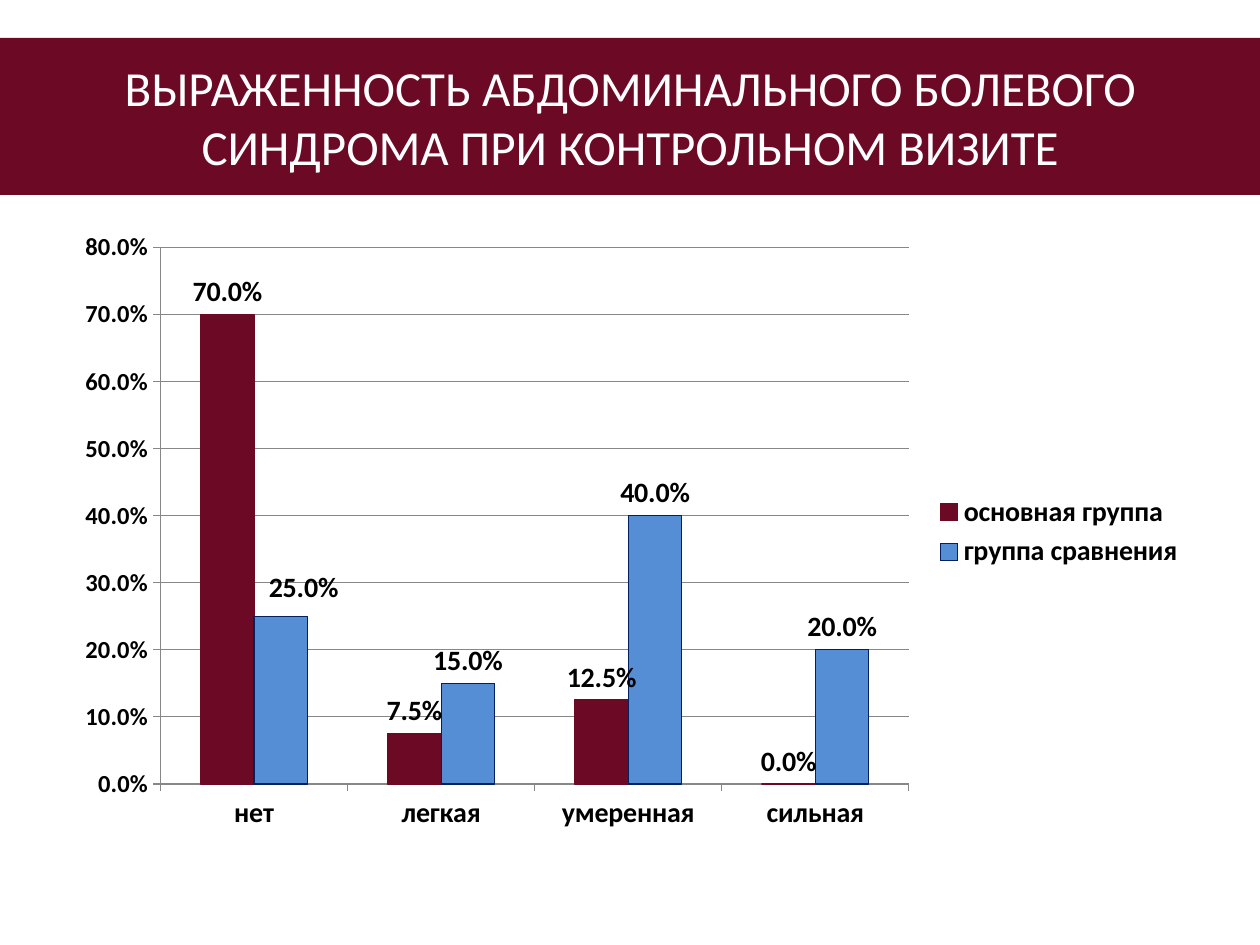
from dataclasses import dataclass

from lxml.etree import SubElement
from pptx import Presentation
from pptx.chart.data import CategoryChartData
from pptx.dml.color import RGBColor
from pptx.enum.chart import XL_CHART_TYPE, XL_LABEL_POSITION, XL_LEGEND_POSITION, XL_TICK_MARK
from pptx.enum.text import MSO_ANCHOR, PP_ALIGN
from pptx.oxml import parse_xml
from pptx.oxml.ns import nsdecls, qn
from pptx.util import Emu, Pt

WINE = RGBColor(0x6C, 0x0A, 0x26)
BLUE = RGBColor(0x55, 0x8E, 0xD5)
NAVY = RGBColor(0x00, 0x20, 0x60)
GRAY = RGBColor(0x87, 0x87, 0x87)
BLACK = RGBColor(0, 0, 0)
WHITE = RGBColor(255, 255, 255)
FONT = "Calibri"
PERCENT = "0.0%"


@dataclass
class Group:
    name: str
    values: tuple[float, ...]
    fill: RGBColor
    line: RGBColor


LEVELS = ("нет", "легкая", "умеренная", "сильная")
GROUPS = (
    Group("основная группа", (0.7, 0.075, 0.125, 0), WINE, WINE),
    Group("группа сравнения", (0.25, 0.15, 0.4, 0.2), BLUE, NAVY),
)


def px(count: int) -> Emu:
    return Emu(round(count * 914400 / 126))


def style(font, size: int, bold: bool = True, color: RGBColor = BLACK) -> None:
    font.name = FONT
    font.size = Pt(size)
    font.bold = bold
    font.color.rgb = color


def layout(**places: float):
    """Manual chart layout; places are fractions of the chart size."""
    root = parse_xml(f"<c:layout {nsdecls('c')}><c:manualLayout/></c:layout>")
    for key, value in places.items():
        SubElement(root[0], qn(f"c:{key}")).set("val", str(value))
    return root


def add_title(slide, text: str) -> None:
    title = slide.shapes.title
    title.left, title.top, title.width, title.height = px(0), px(38), px(1260), px(157)
    title.fill.solid()
    title.fill.fore_color.rgb = WINE
    frame = title.text_frame
    frame.text = text
    frame.word_wrap = True
    frame.vertical_anchor = MSO_ANCHOR.MIDDLE
    frame.paragraphs[0].alignment = PP_ALIGN.CENTER
    style(frame.paragraphs[0].runs[0].font, 28, False, WHITE)


def style_axis(axis, size: int) -> None:
    style(axis.tick_labels.font, size)
    axis.major_tick_mark = XL_TICK_MARK.OUTSIDE
    axis.format.line.color.rgb = GRAY


def style_series(series, group: Group) -> None:
    series.format.fill.solid()
    series.format.fill.fore_color.rgb = group.fill
    series.format.line.color.rgb = group.line
    series.format.line.width = Pt(0.75)
    labels = series.data_labels
    labels.show_value = True
    labels.number_format = PERCENT
    labels.number_format_is_linked = False
    labels.position = XL_LABEL_POSITION.OUTSIDE_END
    style(labels.font, 16)


def shift_label(series, index: int, right: float, down: float) -> None:
    label = series.points[index].data_label
    style(label.font, 16)
    label.position = XL_LABEL_POSITION.OUTSIDE_END
    node = series.data_labels._element.find(qn("c:dLbl"))
    node.insert(1, layout(x=right, y=down))


def add_chart(slide) -> None:
    data = CategoryChartData(number_format=PERCENT)
    data.categories = LEVELS
    for group in GROUPS:
        data.add_series(group.name, group.values)
    chart = slide.shapes.add_chart(
        XL_CHART_TYPE.COLUMN_CLUSTERED, px(63), px(220), px(1134), px(624), data
    ).chart
    style(chart.font, 18, False)
    chart.has_title = False
    chart.has_legend = True
    chart.legend.position = XL_LEGEND_POSITION.RIGHT
    chart.legend.include_in_layout = False
    style(chart.legend.font, 16)

    style_axis(chart.category_axis, 16)
    values = chart.value_axis
    style_axis(values, 14)
    values.minimum_scale, values.maximum_scale, values.major_unit = 0, 0.8, 0.1
    values.tick_labels.number_format = PERCENT
    values.tick_labels.number_format_is_linked = False
    values.major_gridlines.format.line.color.rgb = GRAY

    plot = chart.plots[0]
    plot.gap_width, plot.overlap, plot.vary_by_categories = 150, 0, False
    for series, group in zip(plot.series, GROUPS):
        style_series(series, group)
    shift_label(plot.series[1], 0, 0.02, -0.01)

    area = chart._chartSpace.chart.plotArea
    for old in area.findall(qn("c:layout")):
        area.remove(old)
    area.insert(0, layout(layoutTarget="inner", xMode="edge", yMode="edge",
                          x=0.086, y=0.044, w=0.66, h=0.86))


def main() -> None:
    deck = Presentation()
    deck.slide_width, deck.slide_height = px(1260), px(945)
    slide = deck.slides.add_slide(deck.slide_layouts[5])
    add_title(slide, "ВЫРАЖЕННОСТЬ АБДОМИНАЛЬНОГО БОЛЕВОГО СИНДРОМА ПРИ КОНТРОЛЬНОМ ВИЗИТЕ")
    add_chart(slide)
    deck.save("out.pptx")


if __name__ == "__main__":
    main()
